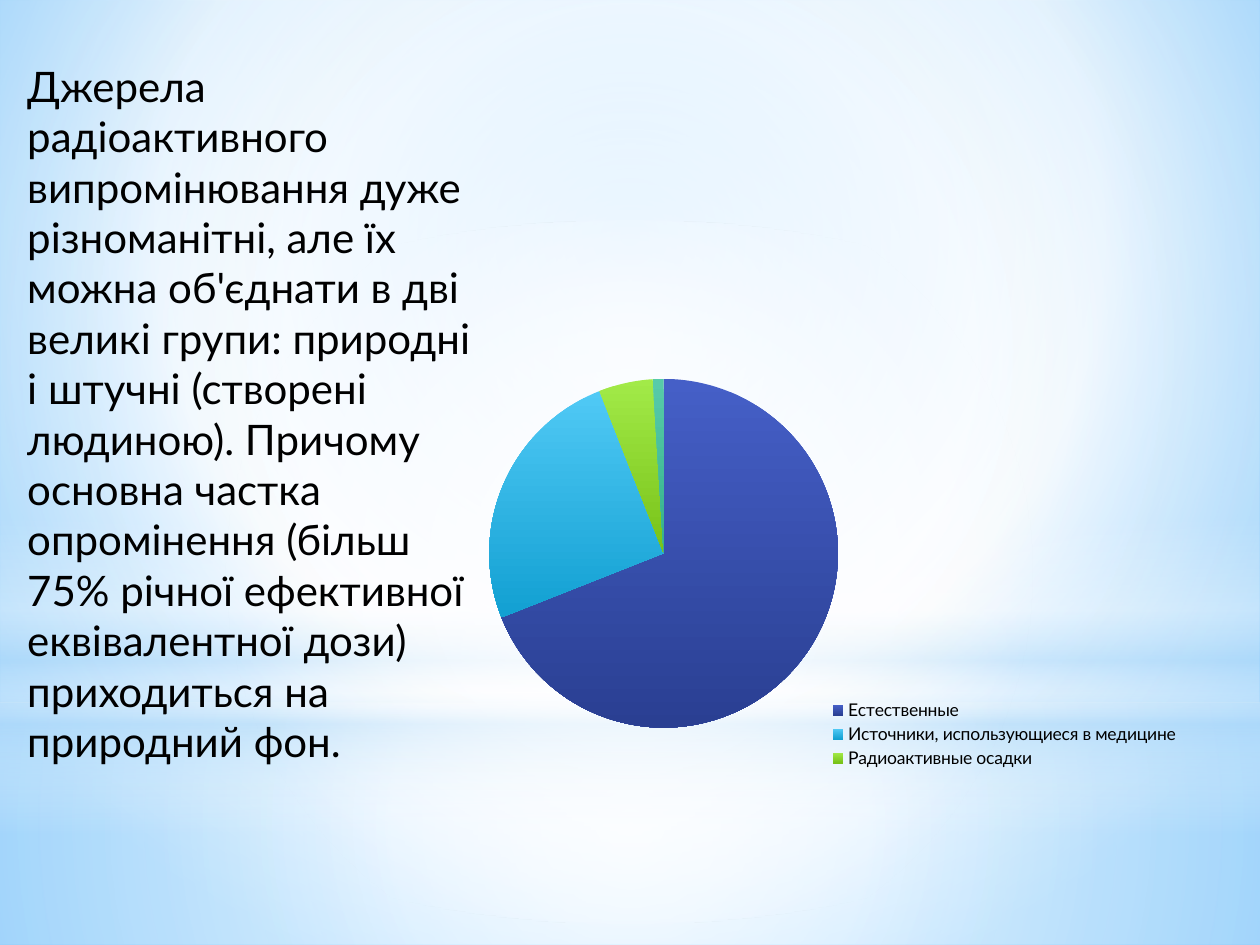
from lxml.etree import SubElement
from pptx import Presentation
from pptx.chart.data import CategoryChartData
from pptx.dml.color import RGBColor
from pptx.enum.chart import XL_CHART_TYPE, XL_LEGEND_POSITION
from pptx.enum.shapes import MSO_SHAPE
from pptx.oxml.ns import qn
from pptx.util import Cm, Pt

FONT = "Lato"
CENTER = (50, 50, 50, 50)
BACKGROUND_STOPS = [(0, "9ED5FF", 100), (60, "FFFFFF", 100), (100, "5BB9FF", 100)]
BACKGROUND_FOCUS = (20, 10, 20, 60)

# Shape, top and height in cm, stops (position, colour, opacity), radial focus
LAYERS = [
    (MSO_SHAPE.RECTANGLE, 14.17, 4.88,
     [(0, "FFFFFF", 91), (37, "FFFFFF", 76), (100, "B4DCFA", 79)], CENTER),
    (MSO_SHAPE.RECTANGLE, 0, 14.17,
     [(0, "FFFFFF", 89), (48, "FFFFFF", 62), (100, "B4DCFA", 79)], CENTER),
    (MSO_SHAPE.RECTANGLE, 10.46, 6.35,
     [(0, "FFFFFF", 0), (29, "FFFFFF", 30), (45, "B4DCFA", 40),
      (55, "FFFFFF", 26), (65, "B4DCFA", 60), (100, "FFFFFF", 0)], None),
    (MSO_SHAPE.OVAL, 4.45, 14.17,
     [(0, "FFFFFF", 100), (56, "FFFFFF", 0)], CENTER),
]

BODY = (
    "Джерела радіоактивного випромінювання дуже різноманітні, але їх можна "
    "об'єднати в дві великі групи: природні і штучні (створені людиною). "
    "Причому основна частка опромінення (більш 75% річної ефективної "
    "еквівалентної дози) приходиться на природний фон."
)

# Category, share, top and bottom colour of the slice; the last has no label
SOURCES = [
    ("Естественные", 69, "455FC7", "2A3F92"),
    ("Источники, использующиеся в медицине", 25, "50C9F5", "12A0D2"),
    ("Радиоактивные осадки", 5, "A2EA48", "78C218"),
    ("", 1, "57CBA9", "34B08C"),
]


def rgb(value):
    return RGBColor.from_string(value)


def set_gradient(properties, stops, focus):
    """Replace a solid fill by a radial gradient, or a vertical one without focus."""
    solid = properties.find(qn("a:solidFill"))
    gradient = properties.makeelement(qn("a:gradFill"), {"rotWithShape": "1"})
    stop_list = SubElement(gradient, qn("a:gsLst"))
    for position, color, opacity in stops:
        stop = SubElement(stop_list, qn("a:gs"), pos=str(position * 1000))
        color_element = SubElement(stop, qn("a:srgbClr"), val=color)
        if opacity < 100:
            SubElement(color_element, qn("a:alpha"), val=str(opacity * 1000))
    if focus:
        radial = SubElement(gradient, qn("a:path"), path="circle")
        edges = {side: str(value * 1000) for side, value in zip("ltrb", focus)}
        SubElement(radial, qn("a:fillToRect"), edges)
    else:
        SubElement(gradient, qn("a:lin"), ang="5400000", scaled="0")
    properties.replace(solid, gradient)


def set_background(slide):
    slide.background.fill.solid()
    properties = slide.element.find(".//" + qn("p:bgPr"))
    set_gradient(properties, BACKGROUND_STOPS, BACKGROUND_FOCUS)


def add_layer(slide, kind, top, height, stops, focus):
    shape = slide.shapes.add_shape(kind, 0, Cm(top), Cm(25.4), Cm(height))
    shape.shadow.inherit = False
    shape.line.fill.background()
    shape.fill.solid()
    set_gradient(shape.element.spPr, stops, focus)


def add_body(slide):
    box = slide.shapes.add_textbox(Cm(0.3), Cm(1.09), Cm(9.6), Cm(14.5))
    text_frame = box.text_frame
    text_frame.word_wrap = True
    text_frame.text = BODY
    font = text_frame.paragraphs[0].runs[0].font
    font.name = FONT
    font.size = Pt(24)
    font.color.rgb = rgb("000000")


def make_layout(parent, x, y, width, height, inner=False):
    """Return a manual chart layout, in fractions of the chart area."""
    layout = parent.makeelement(qn("c:layout"))
    manual = SubElement(layout, qn("c:manualLayout"))
    if inner:
        SubElement(manual, qn("c:layoutTarget"), val="inner")
    for tag in ("xMode", "yMode"):
        SubElement(manual, qn("c:" + tag), val="edge")
    for tag, value in zip("xywh", (x, y, width, height)):
        SubElement(manual, qn("c:" + tag), val=str(value))
    return layout


def place_plot(chart):
    plot_area = chart.element.find(".//" + qn("c:plotArea"))
    for layout in plot_area.findall(qn("c:layout")):
        plot_area.remove(layout)
    plot_area.insert(0, make_layout(plot_area, 0.02, 0.1, 0.47, 0.8, inner=True))


def add_legend(chart, unlabelled_entry):
    chart.has_legend = True
    chart.legend.position = XL_LEGEND_POSITION.RIGHT
    chart.legend.include_in_layout = False
    legend = chart.element.find(".//" + qn("c:legend"))
    for layout in legend.findall(qn("c:layout")):
        legend.remove(layout)
    entry = legend.makeelement(qn("c:legendEntry"))
    SubElement(entry, qn("c:idx"), val=str(unlabelled_entry))
    SubElement(entry, qn("c:delete"), val="1")
    position = legend.find(qn("c:legendPos"))
    position.addnext(entry)
    entry.addnext(make_layout(legend, 0.45, 0.83, 0.52, 0.17))


def add_pie(slide):
    data = CategoryChartData()
    data.categories = [source[0] for source in SOURCES]
    data.add_series("Series 1", [source[1] for source in SOURCES])
    chart = slide.shapes.add_chart(
        XL_CHART_TYPE.PIE, Cm(9.53), Cm(6.76), Cm(15.09), Cm(8.79), data
    ).chart
    chart.has_title = False
    chart.font.name = FONT
    chart.font.size = Pt(10)
    chart.font.color.rgb = rgb("000000")
    plot = chart.plots[0]
    plot.vary_by_categories = True
    for index, (_, _, top_color, bottom_color) in enumerate(SOURCES):
        fill = plot.series[0].points[index].format.fill
        fill.gradient()
        fill.gradient_angle = 270
        for stop, color in zip(fill.gradient_stops, (top_color, bottom_color)):
            stop.color.rgb = rgb(color)
    place_plot(chart)
    add_legend(chart, unlabelled_entry=len(SOURCES) - 1)


def main():
    presentation = Presentation()
    presentation.slide_width = Cm(25.4)
    presentation.slide_height = Cm(19.05)
    slide = presentation.slides.add_slide(presentation.slide_layouts[6])
    set_background(slide)
    for layer in LAYERS:
        add_layer(slide, *layer)
    add_body(slide)
    add_pie(slide)
    presentation.save("out.pptx")


if __name__ == "__main__":
    main()
